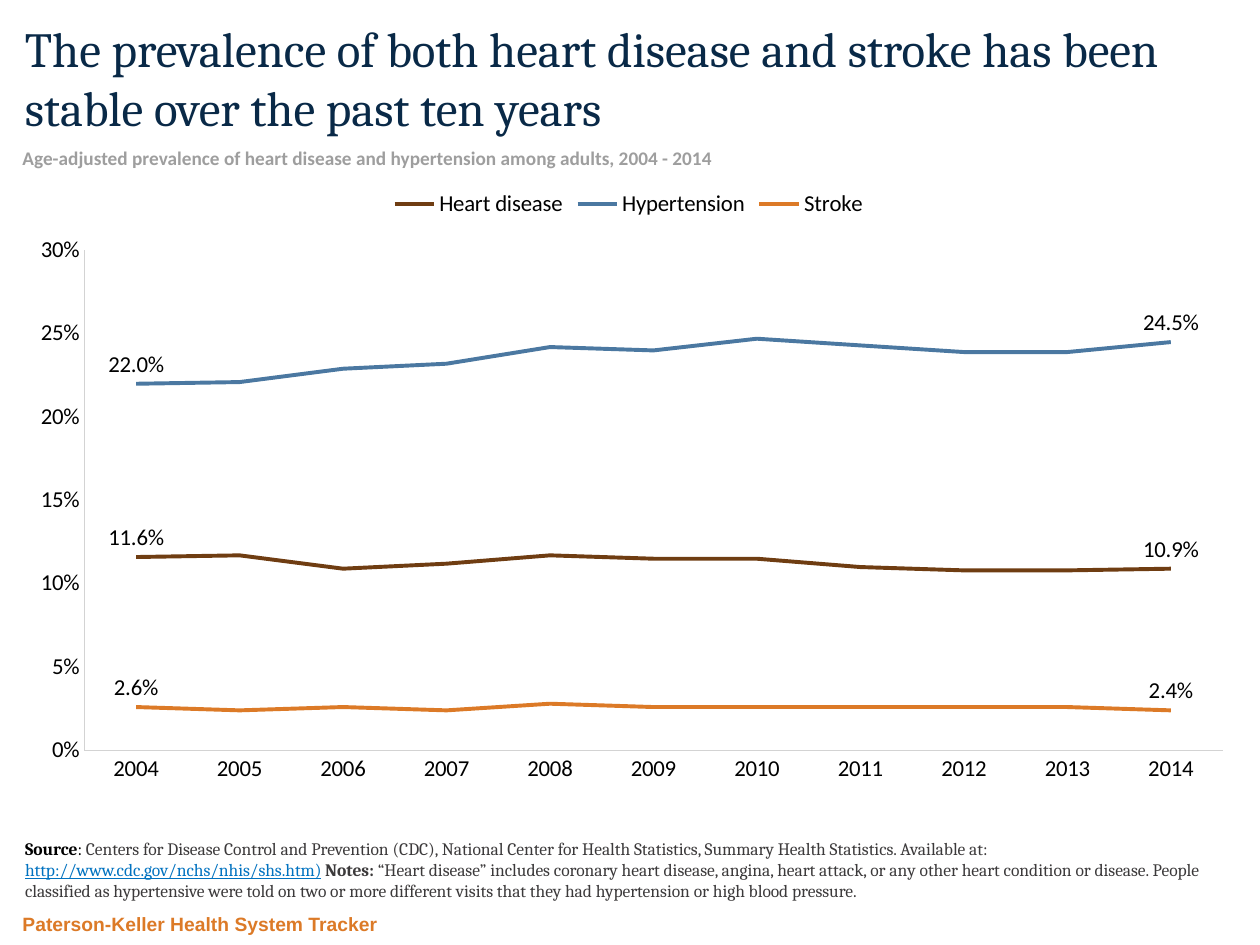
import pptx
import pptx.chart.data
import pptx.dml.color
import pptx.enum.chart
import pptx.enum.text
import pptx.oxml
import pptx.oxml.ns
import pptx.util
from dataclasses import dataclass

Inches = pptx.util.Inches
Pt = pptx.util.Pt
ANCHOR = pptx.enum.text.MSO_ANCHOR


@dataclass(frozen=True)
class Theme:
    heading_font: str = "Cambria"
    chart_font: str = "Calibri"
    brand_font: str = "Arial"
    title_size: float = 28
    small_size: float = 11
    source_size: float = 10
    chart_size: float = 13
    navy: str = "092947"
    grey: str = "9E9E9E"
    black: str = "000000"
    charcoal: str = "3C3A3B"
    link: str = "0072C0"
    axis: str = "D3D3D3"
    brown: str = "6F3D12"
    blue: str = "4B78A1"
    orange: str = "DC7A27"


THEME = Theme()

YEARS = [str(year) for year in range(2004, 2015)]
PREVALENCE = [
    ("Heart disease", THEME.brown,
     [0.116, 0.117, 0.109, 0.112, 0.117, 0.115, 0.115, 0.11, 0.108, 0.108, 0.109]),
    ("Hypertension", THEME.blue,
     [0.22, 0.221, 0.229, 0.232, 0.242, 0.24, 0.247, 0.243, 0.239, 0.239, 0.245]),
    ("Stroke", THEME.orange,
     [0.026, 0.024, 0.026, 0.024, 0.028, 0.026, 0.026, 0.026, 0.026, 0.026, 0.024]),
]

# Each source run: text, colour, bold, underline
SOURCE_RUNS = [
    ("Source", THEME.black, True, False),
    (": ", THEME.black, False, False),
    ("Centers for Disease Control and Prevention (CDC), National Center for Health "
     "Statistics, Summary Health Statistics. Available at: ", THEME.charcoal, False, False),
    ("http://www.cdc.gov/nchs/nhis/shs.htm)", THEME.link, False, True),
    (" ", THEME.charcoal, False, False),
    ("Notes: ", THEME.charcoal, True, False),
    ("“Heart disease” includes coronary heart disease, angina, heart attack, or any other "
     "heart condition or disease. People classified as hypertensive were told on two or more "
     "different visits that they had hypertension or high blood pressure.",
     THEME.charcoal, False, False),
]


def style_font(font, name, size, color, bold=False, underline=False):
    font.name = name
    font.size = Pt(size)
    font.bold = bold
    font.underline = underline
    font.color.rgb = pptx.dml.color.RGBColor.from_string(color)


def add_text(slide, box, runs, font_name, size, anchor=ANCHOR.TOP):
    frame = slide.shapes.add_textbox(*map(Inches, box)).text_frame
    frame.word_wrap = True
    frame.vertical_anchor = anchor
    for text, color, bold, underline in runs:
        run = frame.paragraphs[0].add_run()
        run.text = text
        style_font(run.font, font_name, size, color, bold, underline)


def style_line(line, color, width):
    line.color.rgb = pptx.dml.color.RGBColor.from_string(color)
    line.width = Pt(width)


def style_axis(axis, number_format):
    axis.has_major_gridlines = False
    axis.major_tick_mark = pptx.enum.chart.XL_TICK_MARK.NONE
    axis.minor_tick_mark = pptx.enum.chart.XL_TICK_MARK.NONE
    axis.tick_labels.number_format = number_format
    axis.tick_labels.number_format_is_linked = False
    style_font(axis.tick_labels.font, THEME.chart_font, THEME.chart_size, THEME.black)
    style_line(axis.format.line, THEME.axis, 0.75)


def place_plot(chart, x, y, w, h):
    """Fix the inner plot area, in fractions of the chart."""
    plot_area = chart.element.find(".//" + pptx.oxml.ns.qn("c:plotArea"))
    for layout in plot_area.findall(pptx.oxml.ns.qn("c:layout")):
        plot_area.remove(layout)
    sizes = "".join(f'<c:{tag} val="{value}"/>'
                    for tag, value in zip("xywh", (x, y, w, h)))
    plot_area.insert(0, pptx.oxml.parse_xml(
        f'<c:layout {pptx.oxml.ns.nsdecls("c")}><c:manualLayout>'
        '<c:layoutTarget val="inner"/><c:xMode val="edge"/><c:yMode val="edge"/>'
        f'{sizes}</c:manualLayout></c:layout>'))


def add_prevalence_chart(slide, box):
    data = pptx.chart.data.CategoryChartData(number_format="0.0%")
    data.categories = YEARS
    for name, _, values in PREVALENCE:
        data.add_series(name, values)
    chart = slide.shapes.add_chart(
        pptx.enum.chart.XL_CHART_TYPE.LINE, *map(Inches, box), data).chart
    chart.has_title = False
    style_font(chart.font, THEME.chart_font, THEME.chart_size, THEME.black)
    place_plot(chart, 0.06, 0.12, 0.92, 0.81)

    # Legend and axes
    chart.has_legend = True
    chart.legend.position = pptx.enum.chart.XL_LEGEND_POSITION.TOP
    chart.legend.include_in_layout = False
    style_font(chart.legend.font, THEME.chart_font, THEME.chart_size, THEME.black)
    style_axis(chart.category_axis, "General")
    style_axis(chart.value_axis, "0%")
    chart.value_axis.minimum_scale = 0
    chart.value_axis.maximum_scale = 0.3
    chart.value_axis.major_unit = 0.05

    # Lines, labelled at the first and last year
    chart.plots[0].vary_by_categories = False
    for series, (_, color, _) in zip(chart.plots[0].series, PREVALENCE):
        series.smooth = False
        series.marker.style = pptx.enum.chart.XL_MARKER_STYLE.NONE
        style_line(series.format.line, color, 2.25)
        series.data_labels.show_value = False
        for year_index in (0, len(YEARS) - 1):
            label = series.points[year_index].data_label
            style_font(label.font, THEME.chart_font, THEME.chart_size, THEME.black)
            label.position = pptx.enum.chart.XL_LABEL_POSITION.ABOVE


def main():
    deck = pptx.Presentation()
    deck.slide_width, deck.slide_height = Inches(10), Inches(7.5)
    slide = deck.slides.add_slide(deck.slide_layouts[6])

    # Heading
    add_text(slide, (0.1, 0.1, 9.8, 1),
             [("The prevalence of both heart disease and stroke has been stable over the "
               "past ten years", THEME.navy, False, False)],
             THEME.heading_font, THEME.title_size)
    add_text(slide, (0.08, 1.11, 9.67, 0.29),
             [("Age-adjusted prevalence of heart disease and hypertension among adults, "
               "2004 - 2014", THEME.grey, True, False)],
             THEME.chart_font, THEME.small_size)

    add_prevalence_chart(slide, (0.08, 1.4, 9.82, 4.9))

    # Source and tracker name
    add_text(slide, (0.1, 6.4, 9.82, 0.8), SOURCE_RUNS,
             THEME.heading_font, THEME.source_size, ANCHOR.BOTTOM)
    add_text(slide, (0.08, 7.17, 7.98, 0.3),
             [("Paterson-Keller Health System Tracker", THEME.orange, True, False)],
             THEME.brand_font, THEME.small_size, ANCHOR.BOTTOM)

    deck.save("out.pptx")


if __name__ == "__main__":
    main()
